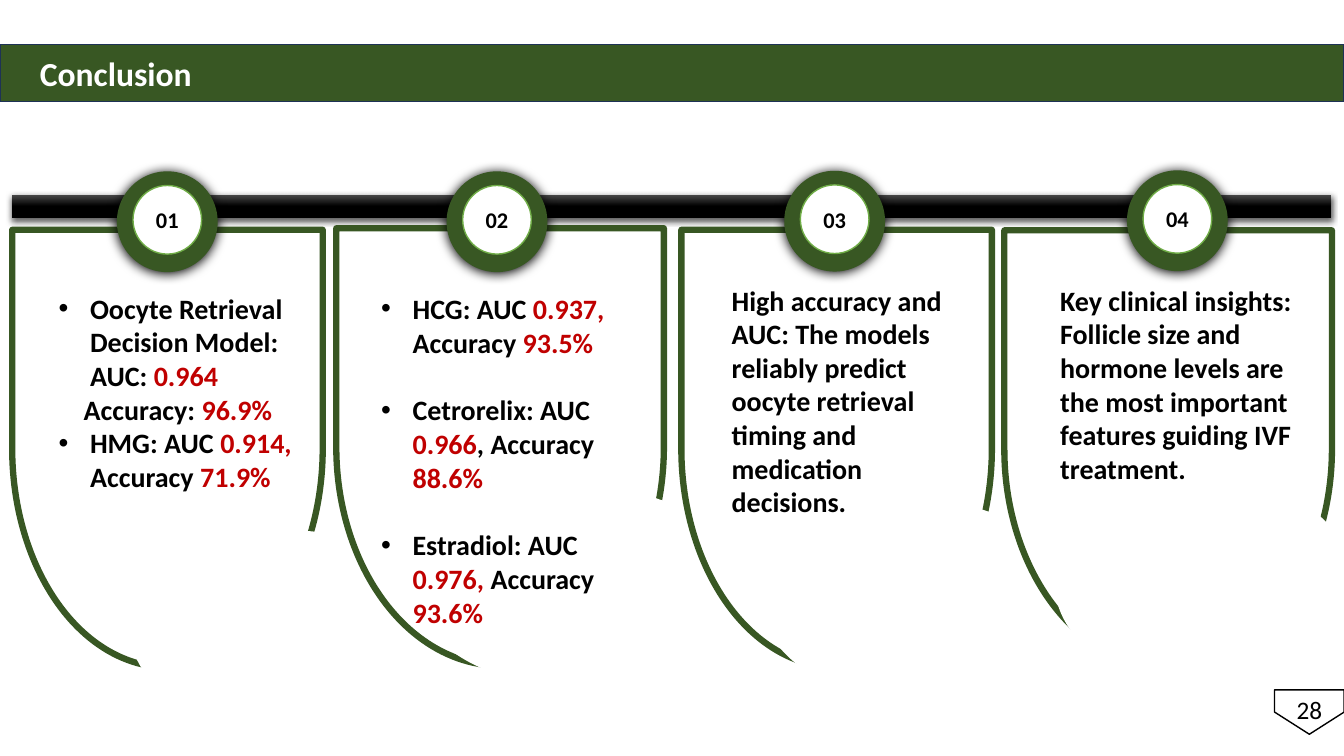
import pptx
import pptx.dml.color
import pptx.enum.shapes
import pptx.enum.text
import pptx.oxml
import pptx.oxml.ns
import pptx.util

Pt = pptx.util.Pt
colour = pptx.dml.color.RGBColor.from_string
Preset = pptx.enum.shapes.MSO_SHAPE
Anchor = pptx.enum.text.MSO_ANCHOR
Align = pptx.enum.text.PP_ALIGN
qn = pptx.oxml.ns.qn

GREEN, RED, BLACK, WHITE = "385723", "C00000", "000000", "FFFFFF"


def draw(preset, box, fill, line=None, weight=1):
    shape = slide.shapes.add_shape(preset, *[Pt(length) for length in box])
    shape.shadow.inherit = False
    shape.fill.solid()
    shape.fill.fore_color.rgb = colour(fill)
    if line:
        shape.line.color.rgb = colour(line)
        shape.line.width = Pt(weight)
    else:
        shape.line.fill.background()
    return shape


def write(paragraph, text, size, hue=BLACK, bold=True):
    run = paragraph.add_run()
    run.text = text
    run.font.name = "Calibri"
    run.font.size = Pt(size)
    run.font.bold = bold
    run.font.color.rgb = colour(hue)


deck = pptx.Presentation()
deck.slide_width, deck.slide_height = Pt(960), Pt(540)
slide = deck.slides.add_slide(deck.slide_layouts[3])
heading, first_results, second_results = slide.placeholders

timeline = draw(Preset.RECTANGLE, (8.6, 139, 942.5, 16.6), BLACK)
timeline.fill.gradient()
timeline.fill.gradient_angle = 270
for stop, position, hue in zip(timeline.fill.gradient_stops, (0, 0.5), ("4B4B4B", BLACK)):
    stop.position = position
    stop.color.rgb = colour(hue)
shadows = [(timeline, 63, 4.5, 1.5)]

heading.left, heading.top, heading.width, heading.height = Pt(0), Pt(31.7), Pt(960), Pt(41)
heading.fill.solid()
heading.fill.fore_color.rgb = colour(GREEN)
heading.line.color.rgb = colour("1E3256")
heading.line.width = Pt(1)
heading.text_frame.margin_left = Pt(28.5)
heading.text_frame.vertical_anchor = Anchor.MIDDLE
heading.text_frame.paragraphs[0].alignment = Align.LEFT
write(heading.text_frame.paragraphs[0], "Conclusion", 24, WHITE)

page_marker = draw(Preset.PENTAGON, (919.4, 483.8, 31.7, 49.7), WHITE, BLACK)
page_marker.rotation = 90
page_number = slide.shapes.add_textbox(Pt(918.7), Pt(492.5), Pt(33.1), Pt(28.8))
page_number.text_frame.word_wrap = False
page_number.text_frame.paragraphs[0].alignment = Align.CENTER
write(page_number.text_frame.paragraphs[0], "28", 18, bold=False)

card_length = 312.5
cards = [
    (119.6, 320.4, 221.8, (93.6, 379.4, 227.5, 142.6)),
    (357.2, 319.3, 234, (295.9, 347.8, 234, 142.6)),
    (597.6, 320.4, 221.8, (544.3, 357.1, 218.2, 142.6)),
    (834.4, 320.8, 234, (753.8, 341.3, 212.4, 149.8)),
]
for centre_x, centre_y, breadth, mask_box in cards:
    card_box = (centre_x - card_length / 2, centre_y - breadth / 2, card_length, breadth)
    card = draw(Preset.FLOWCHART_DELAY, card_box, WHITE, GREEN, 4.5)
    card.rotation = 90
    draw(Preset.OVAL, mask_box, WHITE, WHITE)

insights = [
    ((515.5, 198.7, 181.4, 177.1), Anchor.TOP,
     "High accuracy and AUC: The models reliably predict oocyte retrieval timing "
     "and medication decisions."),
    ((750.2, 198, 200.9, 152.6), Anchor.MIDDLE,
     "Key clinical insights: Follicle size and hormone levels are the most important "
     "features guiding IVF treatment."),
]
for box, anchor, sentence in insights:
    insight = slide.shapes.add_textbox(*[Pt(length) for length in box])
    insight.text_frame.word_wrap = True
    insight.text_frame.vertical_anchor = anchor
    write(insight.text_frame.paragraphs[0], sentence, 20)

rings = [(83.5, 122.4), (319, 122.4), (560.2, 122), (805, 121.7)]
for number, (left, top) in enumerate(rings, 1):
    ring = draw(Preset.OVAL, (left, top, 72, 72), GREEN)
    shadows.append((ring, 100, 8.5, 1))
    badge = draw(Preset.OVAL, (left + 11.5, top + 10.1, 49, 49), WHITE, "70AD47")
    label = badge.text_frame
    label.margin_left = label.margin_right = label.margin_top = label.margin_bottom = 0
    label.vertical_anchor = Anchor.MIDDLE
    label.paragraphs[0].alignment = Align.CENTER
    write(label.paragraphs[0], f"{number:02}", 16)

for shape, opacity, blur, distance in shadows:
    effects = shape.element.spPr.find(qn("a:effectLst"))
    effects.append(pptx.oxml.parse_xml(
        f'<a:outerShdw {pptx.oxml.ns.nsdecls("a")} blurRad="{Pt(blur)}" dist="{Pt(distance)}" '
        f'dir="5400000" algn="ctr" rotWithShape="0"><a:srgbClr val="{BLACK}">'
        f'<a:alpha val="{opacity * 1000}"/></a:srgbClr></a:outerShdw>'))

results = [
    (first_results, (34.6, 204.5, 194.4, 216), Anchor.TOP, 0, [
        (True, 22.5, [("Oocyte Retrieval Decision Model:", BLACK)]),
        (False, 22.5, [("AUC: ", BLACK), ("0.964", RED)]),
        (False, 18, [("Accuracy:", BLACK), (" 96.9%", RED)]),
        (True, 22.5, [("HMG: AUC ", BLACK), ("0.914, ", RED), ("Accuracy ", BLACK), ("71.9%", RED)]),
    ]),
    (second_results, (265, 203.8, 209.5, 249.8), Anchor.MIDDLE, 24.4, [
        (True, 22.5, [("HCG: AUC ", BLACK), ("0.937, ", RED), ("Accuracy ", BLACK), ("93.5%", RED)]),
        (True, 22.5, [("Cetrorelix: AUC ", BLACK), ("0.966", RED), (", Accuracy ", BLACK), ("88.6%", RED)]),
        (True, 22.5, [("Estradiol: AUC ", BLACK), ("0.976, ", RED), ("Accuracy ", BLACK), ("93.6%", RED)]),
    ]),
]
for listing, box, anchor, gap, items in results:
    listing.left, listing.top, listing.width, listing.height = [Pt(length) for length in box]
    listing.element.getparent().append(listing.element)
    frame = listing.text_frame
    frame.auto_size = pptx.enum.text.MSO_AUTO_SIZE.NONE
    frame.vertical_anchor = anchor
    for index, (bulleted, margin, pieces) in enumerate(items):
        paragraph = frame.add_paragraph() if index else frame.paragraphs[0]
        paragraph.space_before = Pt(gap if index else 0)
        properties = paragraph._p.get_or_add_pPr()
        properties.set("marL", str(Pt(margin)))
        properties.set("indent", str(Pt(-margin if bulleted else 0)))
        bullet = pptx.oxml.parse_xml(
            f'<a:{"buChar" if bulleted else "buNone"} {pptx.oxml.ns.nsdecls("a")}/>')
        if bulleted:
            bullet.set("char", "•")
        properties.append(bullet)
        for text, hue in pieces:
            write(paragraph, text, 20, hue)

deck.save("out.pptx")
